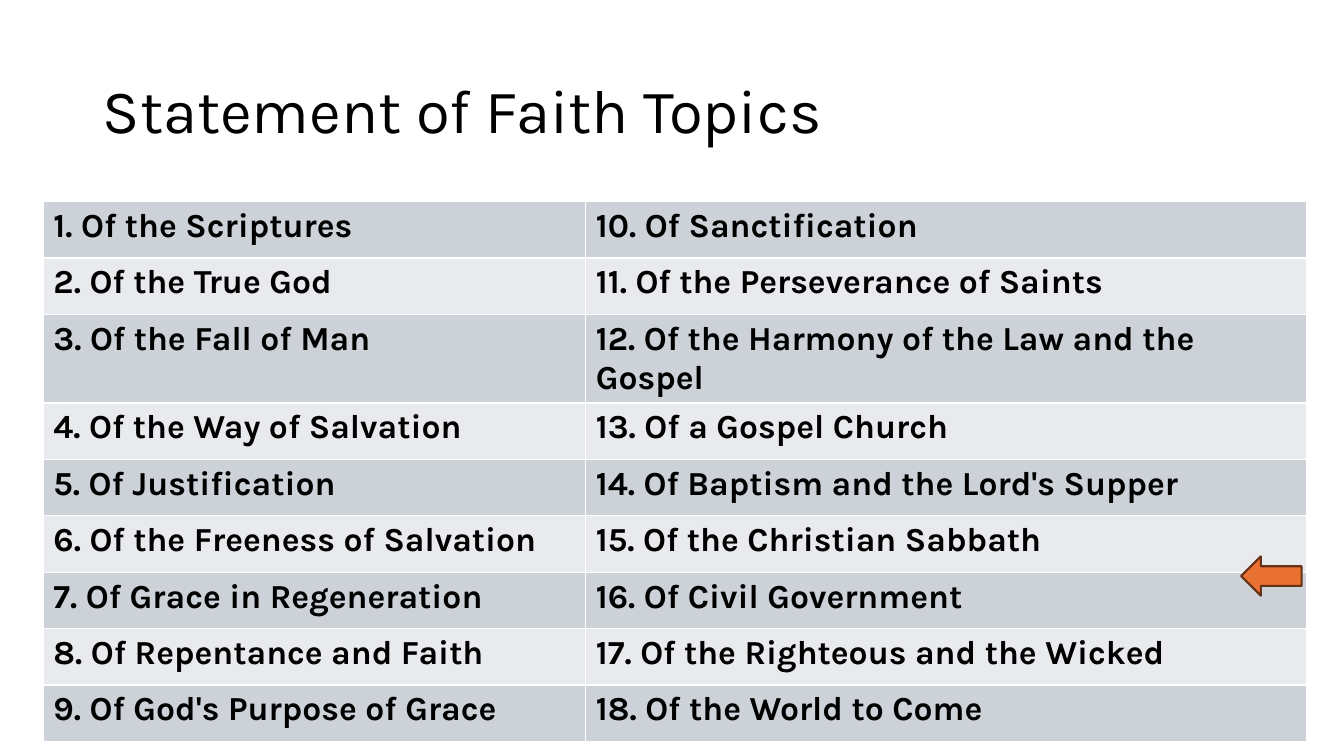
from typing import NamedTuple

from pptx import Presentation
from pptx import util as u
from pptx.dml.color import RGBColor
from pptx.enum import shapes, text
from pptx.table import _Cell

FONT = "Karla"
BLACK = RGBColor(0x00, 0x00, 0x00)
BANDS = (RGBColor(0xCC, 0xD2, 0xD8), RGBColor(0xE8, 0xEA, 0xED))
ORANGE = RGBColor(0xE9, 0x71, 0x32)
BROWN = RGBColor(0x66, 0x32, 0x16)

ROW_HEIGHT = 0.56
TALL_ROW, TALL_HEIGHT = 2, 0.62


class TopicColumn(NamedTuple):
    width: float
    topics: list[str]


COLUMNS = [
    TopicColumn(5.38, [
        "Of the Scriptures",
        "Of the True God",
        "Of the Fall of Man",
        "Of the Way of Salvation",
        "Of Justification",
        "Of the Freeness of Salvation",
        "Of Grace in Regeneration",
        "Of Repentance and Faith",
        "Of God's Purpose of Grace",
    ]),
    TopicColumn(7.15, [
        "Of Sanctification",
        "Of the Perseverance of Saints",
        "Of the Harmony of the Law and the Gospel",
        "Of a Gospel Church",
        "Of Baptism and the Lord's Supper",
        "Of the Christian Sabbath",
        "Of Civil Government",
        "Of the Righteous and the Wicked",
        "Of the World to Come",
    ]),
]


def style_paragraph(para, size: float, bold: bool) -> None:
    para.font.name = FONT
    para.font.size = u.Pt(size)
    para.font.bold = bold
    para.font.color.rgb = BLACK


def fill_cell(cell: _Cell, wording: str, color: RGBColor) -> None:
    cell.text = wording
    cell.fill.solid()
    cell.fill.fore_color.rgb = color
    style_paragraph(cell.text_frame.paragraphs[0], 24, True)


def add_title(page, wording: str) -> None:
    title = page.shapes.title
    title.left, title.top = u.Inches(0.92), u.Inches(0.4)
    title.width, title.height = u.Inches(11.5), u.Inches(1.45)
    frame = title.text_frame
    frame.text = wording
    frame.word_wrap = True
    frame.vertical_anchor = text.MSO_ANCHOR.MIDDLE
    para = frame.paragraphs[0]
    para.alignment = text.PP_ALIGN.LEFT
    para.line_spacing = 0.9
    style_paragraph(para, 44, False)


def add_topics(page, columns: list[TopicColumn]) -> None:
    row_count = len(columns[0].topics)
    table = page.shapes.add_table(
        row_count, len(columns), u.Inches(0.43), u.Inches(2),
        u.Inches(sum(column.width for column in columns)),
        u.Inches(row_count * ROW_HEIGHT)).table
    table.first_row = False
    for index, row in enumerate(table.rows):
        row.height = u.Inches(TALL_HEIGHT if index == TALL_ROW else ROW_HEIGHT)

    # Topics are numbered down the first column, then down the second
    number = 1
    for column_index, column in enumerate(columns):
        table.columns[column_index].width = u.Inches(column.width)
        for row_index, topic in enumerate(column.topics):
            fill_cell(table.cell(row_index, column_index),
                      f"{number}. {topic}", BANDS[row_index % 2])
            number += 1


def add_marker(page) -> None:
    arrow = page.shapes.add_shape(
        shapes.MSO_SHAPE.RIGHT_ARROW,
        u.Inches(12.31), u.Inches(5.52), u.Inches(0.6), u.Inches(0.39))
    arrow.rotation = 180
    arrow.shadow.inherit = False
    arrow.fill.solid()
    arrow.fill.fore_color.rgb = ORANGE
    arrow.line.color.rgb = BROWN
    arrow.line.width = u.Pt(1.5)


def main() -> None:
    deck = Presentation()
    deck.slide_width, deck.slide_height = u.Inches(13.33), u.Inches(7.5)
    page = deck.slides.add_slide(deck.slide_layouts.get_by_name("Title Only"))
    add_title(page, "Statement of Faith Topics")
    add_topics(page, COLUMNS)
    add_marker(page)
    deck.save("out.pptx")


if __name__ == "__main__":
    main()
